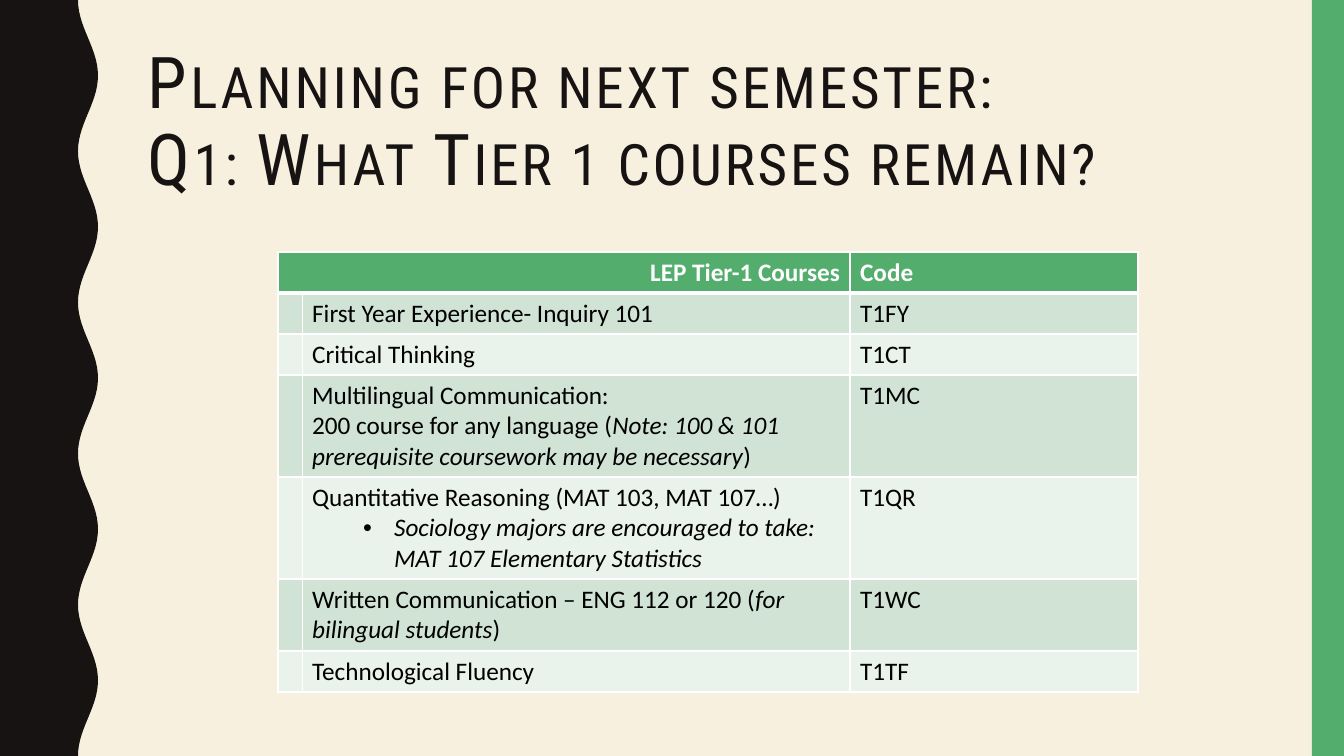
import math

from lxml import etree
from pptx import Presentation
from pptx import util as u
from pptx.dml.color import RGBColor
from pptx.enum import shapes, text
from pptx.oxml import ns

PX = 914400 / 100.8
WIDTH, HEIGHT = 1344, 756
INK, GREEN, CREAM, WHITE, BLACK = "171312", "53AE6E", "F7F0DF", "FFFFFF", "000000"
BANDS = ["D1E3D5", "E9F2EB"]

TITLE = "Planning for next semester: \vQ1: What Tier 1 courses remain?"
HEADER = ("LEP Tier-1 Courses", "Code")
# Each course: paragraphs of (text, italic) runs, code, row height
COURSES = [
    ([[("First Year Experience- Inquiry 101", False)]], "T1FY", 41),
    ([[("Critical Thinking", False)]], "T1CT", 41),
    ([[("Multilingual Communication:", False)],
      [("200 course for any language (", False),
       ("Note: 100 & 101 prerequisite coursework may be necessary", True),
       (")", False)]], "T1MC", 102),
    ([[("Quantitative Reasoning (MAT 103, MAT 107…)", False)],
      [("Sociology majors are encouraged to take: MAT 107 Elementary Statistics", True)]],
     "T1QR", 102),
    ([[("Written Communication – ENG 112 or 120 (", False),
       ("for bilingual students", True), (")", False)]], "T1WC", 72),
    ([[("Technological Fluency", False)]], "T1TF", 41),
]
BULLETED = "Sociology"
COLUMNS = [24, 548, 288]
HEADER_HEIGHT = 41
TABLE_LEFT, TABLE_TOP = 278, 252
WAVE_MIDDLE, WAVE_DEPTH, WAVE_COUNT, WAVE_STEPS = 88, 10, 5, 28


def px(n):
    return u.Emu(round(n * PX))


def rgb(color):
    return RGBColor.from_string(color)


def paint(sp, color):
    sp.shadow.inherit = False
    sp.fill.solid()
    sp.fill.fore_color.rgb = rgb(color)
    sp.line.fill.background()


def style(r, font, size, color, bold=False, italic=False):
    r.font.name, r.font.size = font, u.Pt(size)
    r.font.color.rgb = rgb(color)
    r.font.bold, r.font.italic = bold, italic


def add_wave(slide):
    """Dark left band whose right edge is a cosine wave."""
    count = WAVE_COUNT * WAVE_STEPS
    edge = [(px(WAVE_MIDDLE - WAVE_DEPTH * math.cos(2 * math.pi * i / WAVE_STEPS)),
             px(HEIGHT * i / count)) for i in range(count + 1)]
    builder = slide.shapes.build_freeform(0, 0)
    builder.add_line_segments(edge + [(0, px(HEIGHT))], close=True)
    paint(builder.convert_to_shape(), INK)


def add_title(slide):
    tf = slide.shapes.add_textbox(px(138), px(42), px(1122), px(164)).text_frame
    tf.word_wrap = True
    tf.vertical_anchor = text.MSO_ANCHOR.MIDDLE
    tf.text = TITLE
    p = tf.paragraphs[0]
    p.line_spacing = 0.9
    for r in p.runs:
        style(r, "Roboto Condensed", 51, INK)
        r.font._element.set("cap", "small")
        r.font._element.set("spc", "200")


def dress_cell(cell, fill, top=1, bottom=1):
    tc_pr = cell._tc.get_or_add_tcPr()
    for side, points in (("L", 1), ("R", 1), ("T", top), ("B", bottom)):
        ln = etree.SubElement(tc_pr, ns.qn("a:ln" + side), w=str(u.Pt(points)))
        solid = etree.SubElement(ln, ns.qn("a:solidFill"))
        etree.SubElement(solid, ns.qn("a:srgbClr"), val=WHITE)
    cell.fill.solid()
    cell.fill.fore_color.rgb = rgb(fill)


def add_bullet(p):
    p.level = 1
    p_pr = p._p.get_or_add_pPr()
    p_pr.set("marL", str(px(82)))
    p_pr.set("indent", str(-px(31)))
    etree.SubElement(p_pr, ns.qn("a:buFont"), typeface="Arial")
    etree.SubElement(p_pr, ns.qn("a:buChar"), char="•")


def write_cell(cell, paragraphs, color=BLACK, bold=False):
    tf = cell.text_frame
    for i, runs in enumerate(paragraphs):
        p = tf.add_paragraph() if i else tf.paragraphs[0]
        for words, italic in runs:
            r = p.add_run()
            r.text = words
            style(r, "Calibri", 18, color, bold, italic)
        if runs[0][0].startswith(BULLETED):
            add_bullet(p)


def add_courses(slide):
    heights = [HEADER_HEIGHT] + [height for _, _, height in COURSES]
    table = slide.shapes.add_table(
        len(heights), len(COLUMNS), px(TABLE_LEFT), px(TABLE_TOP),
        px(sum(COLUMNS)), px(sum(heights))).table
    for column, width in zip(table.columns, COLUMNS):
        column.width = px(width)
    for row, height in zip(table.rows, heights):
        row.height = px(height)

    for cell in table.rows[0].cells:
        dress_cell(cell, GREEN, bottom=3)
    table.cell(0, 0).merge(table.cell(0, 1))
    for column, label in zip((0, 2), HEADER):
        write_cell(table.cell(0, column), [[(label, False)]], WHITE, bold=True)
    table.cell(0, 0).text_frame.paragraphs[0].alignment = text.PP_ALIGN.RIGHT

    for i, (course, code, _) in enumerate(COURSES):
        for cell in table.rows[i + 1].cells:
            dress_cell(cell, BANDS[i % 2], top=1 if i else 3)
        write_cell(table.cell(i + 1, 1), course)
        write_cell(table.cell(i + 1, 2), [[(code, False)]])


def main():
    prs = Presentation()
    prs.slide_width, prs.slide_height = px(WIDTH), px(HEIGHT)
    slide = prs.slides.add_slide(prs.slide_layouts[6])
    slide.background.fill.solid()
    slide.background.fill.fore_color.rgb = rgb(CREAM)
    add_wave(slide)
    stripe = slide.shapes.add_shape(
        shapes.MSO_SHAPE.RECTANGLE, px(1312), 0, px(32), px(HEIGHT))
    paint(stripe, GREEN)
    add_title(slide)
    add_courses(slide)
    prs.save("out.pptx")


if __name__ == "__main__":
    main()
